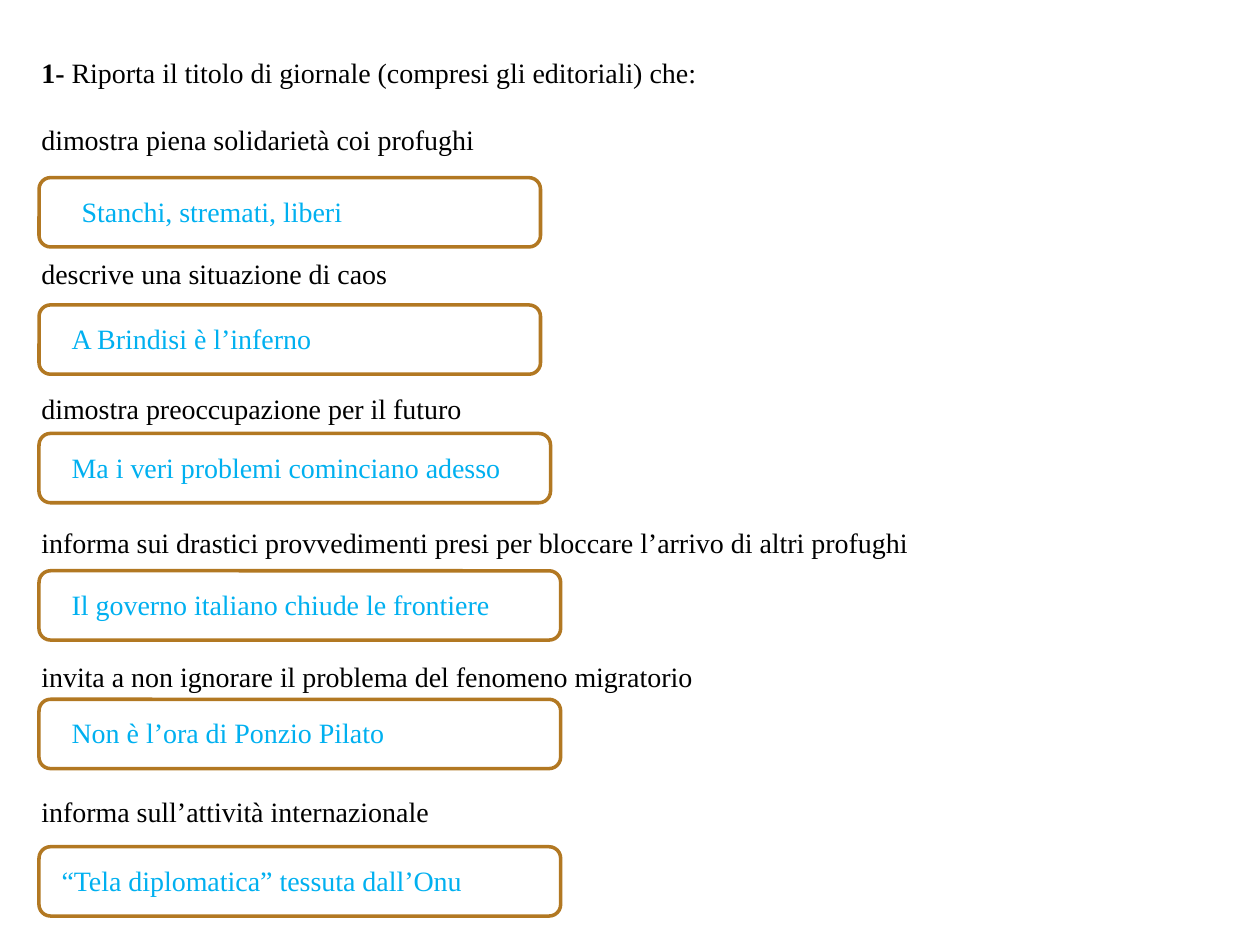
from pptx import Presentation, util as u
from pptx.dml.color import RGBColor
from pptx.enum import shapes, text

BLACK = RGBColor(0x00, 0x00, 0x00)
WHITE = RGBColor(0xFF, 0xFF, 0xFF)
BLUE = RGBColor(0x00, 0xB0, 0xF0)
OCHRE = RGBColor(0xB2, 0x78, 0x22)
LINE_HEIGHT = 19.2


def write(paragraph, words, color=BLACK, bold=False, lines_before=0, align=text.PP_ALIGN.LEFT):
    paragraph.alignment = align
    paragraph.line_spacing = u.Pt(LINE_HEIGHT)
    paragraph.space_before = u.Pt(LINE_HEIGHT * lines_before)
    run = paragraph.add_run()
    run.text = words
    run.font.name = "Times New Roman"
    run.font.size = u.Pt(16)
    run.font.bold = bold
    run.font.color.rgb = color


presentation = Presentation()
presentation.slide_width = u.Inches(10)
presentation.slide_height = u.Inches(7.5)
slide = presentation.slides.add_slide(presentation.slide_layouts[6])

prompts = [
    "dimostra piena solidarietà coi profughi",
    "descrive una situazione di caos",
    "dimostra preoccupazione per il futuro",
    "informa sui drastici provvedimenti presi per bloccare l’arrivo di altri profughi",
    "invita a non ignorare il problema del fenomeno migratorio",
    "informa sull’attività internazionale",
]
answers = [
    ("Stanchi, stremati, liberi", 1.41, 3.98, 0.55, 2.89),
    ("A Brindisi è l’inferno", 2.42, 3.98, 0.47, 2.89),
    ("Ma i veri problemi cominciano adesso", 3.44, 4.06, 0.47, 3.75),
    ("Il governo italiano chiude le frontiere", 4.53, 4.14, 0.47, 3.59),
    ("Non è l’ora di Ponzio Pilato", 5.55, 4.14, 0.47, 2.89),
    ("“Tela diplomatica” tessuta dall’Onu", 6.72, 4.14, 0.39, 3.44),
]

questions = slide.shapes.add_textbox(u.Inches(0.23), u.Inches(0.39), u.Inches(9.45), u.Inches(7))
questions.text_frame.word_wrap = True
heading = questions.text_frame.paragraphs[0]
write(heading, "1- ", bold=True)
write(heading, "Riporta il titolo di giornale (compresi gli editoriali) che:")
for index, prompt in enumerate(prompts):
    paragraph = questions.text_frame.add_paragraph()
    write(paragraph, prompt, lines_before=3 if index else 1)

for answer, top, frame_width, text_left, text_width in answers:
    frame = slide.shapes.add_shape(
        shapes.MSO_SHAPE.ROUNDED_RECTANGLE,
        u.Inches(0.31), u.Inches(top), u.Inches(frame_width), u.Inches(0.55))
    frame.shadow.inherit = False
    frame.fill.solid()
    frame.fill.fore_color.rgb = WHITE
    frame.line.color.rgb = OCHRE
    frame.line.width = u.Pt(2)

    label = slide.shapes.add_textbox(
        u.Inches(text_left), u.Inches(top + 0.08), u.Inches(text_width), u.Inches(0.37))
    label.text_frame.word_wrap = True
    label.text_frame.vertical_anchor = text.MSO_ANCHOR.MIDDLE
    write(label.text_frame.paragraphs[0], answer, color=BLUE, align=text.PP_ALIGN.JUSTIFY)

presentation.save("out.pptx")
